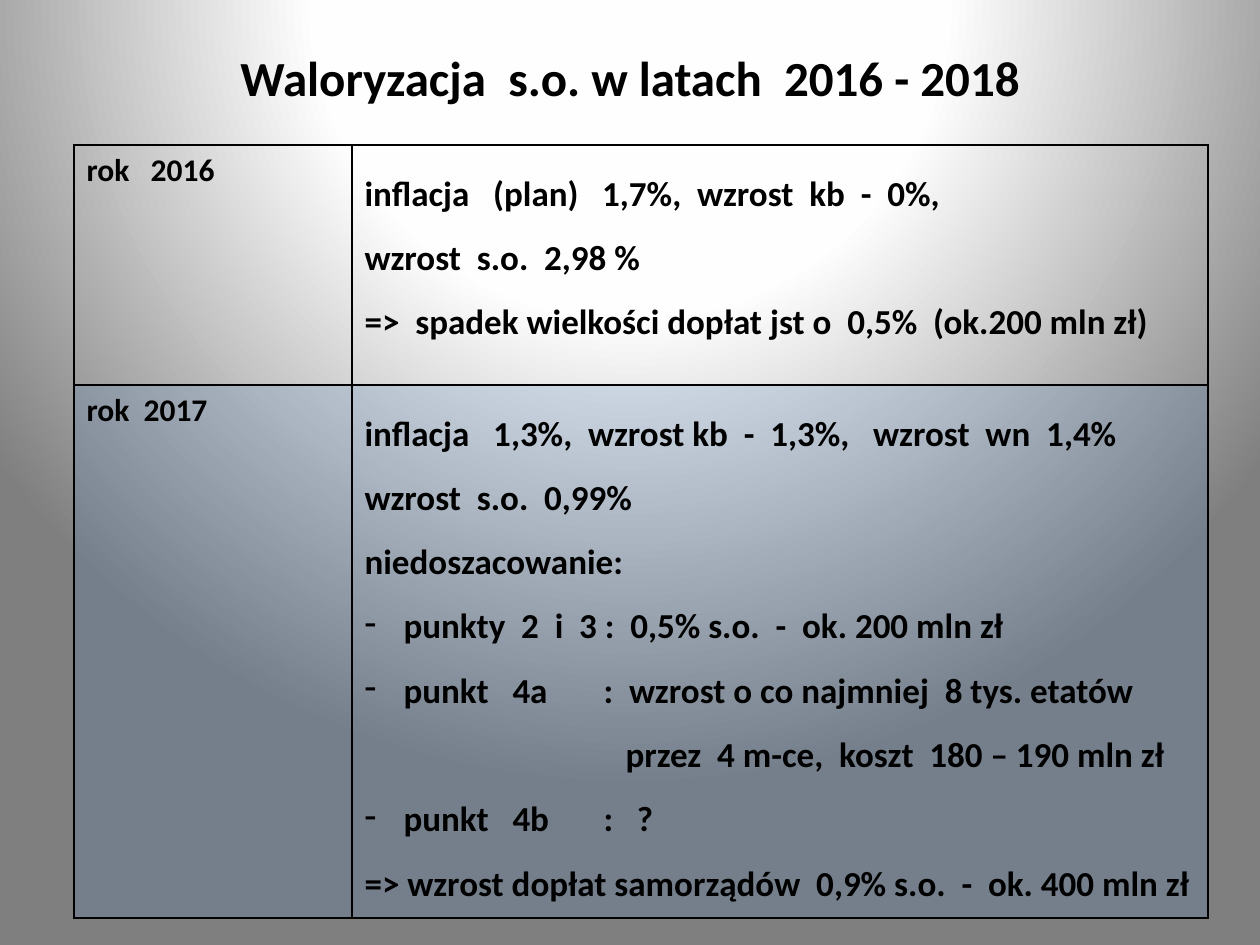
from dataclasses import dataclass

from pptx import Presentation
from pptx import util as u
from pptx.dml.color import RGBColor
from pptx.enum import text
from pptx.oxml import parse_xml
from pptx.oxml.ns import nsdecls, qn

SCALE = 914400 / 126  # EMU in one px


@dataclass(frozen=True)
class Theme:
    font: str = "Calibri"
    ink: str = "000000"
    shade: str = "4F81BD"
    shade_alpha: int = 20
    backdrop: tuple = ((0, "FFFFFF"), (40, "FEFEFE"), (100, "7F7F7F"))
    title_size: int = 28
    year_size: int = 18
    detail_size: int = 20
    line_spacing: float = 1.5


THEME = Theme()
BULLET_INDENT = 39
COLON_TAB = 239
CONTINUATION_INDENT = 261

# Each year: label, shaded or not, lines as (kind, wording)
YEARS = [
    ("rok   2016", False, [
        ("plain", "inflacja   (plan)   1,7%,  wzrost  kb  -  0%,"),
        ("plain", "wzrost  s.o.  2,98 %"),
        ("plain", "=>  spadek wielkości dopłat jst o  0,5%  (ok.200 mln zł)"),
    ]),
    ("rok  2017", True, [
        ("plain", "inflacja   1,3%,  wzrost kb  -  1,3%,   wzrost  wn  1,4%"),
        ("plain", "wzrost  s.o.  0,99%"),
        ("plain", "niedoszacowanie:"),
        ("bullet", "punkty  2  i  3 :  0,5% s.o.  -  ok. 200 mln zł"),
        ("bullet", "punkt   4a\t:  wzrost o co najmniej  8 tys. etatów"),
        ("continuation", "przez  4 m-ce,  koszt  180 – 190 mln zł"),
        ("bullet", "punkt   4b\t:   ?"),
        ("plain", "=> wzrost dopłat samorządów  0,9% s.o.  -  ok. 400 mln zł"),
    ]),
]


def px(length):
    return u.Emu(round(length * SCALE))


def set_background(slide):
    stops = "".join(
        f'<a:gs pos="{position * 1000}"><a:srgbClr val="{color}"/></a:gs>'
        for position, color in THEME.backdrop)
    background = parse_xml(
        f'<p:bg {nsdecls("p", "a")}><p:bgPr><a:gradFill><a:gsLst>{stops}</a:gsLst>'
        '<a:path path="circle"><a:fillToRect l="50000" t="-80000" r="50000" b="180000"/>'
        '</a:path></a:gradFill><a:effectLst/></p:bgPr></p:bg>')
    slide.element.cSld.insert(0, background)


def write(paragraph, wording, size):
    paragraph.text = wording
    font = paragraph.font
    font.name, font.size, font.bold = THEME.font, u.Pt(size), True
    font.color.rgb = RGBColor.from_string(THEME.ink)


def add_title(slide, wording):
    frame = slide.shapes.add_textbox(px(63), px(38), px(1134), px(77)).text_frame
    frame.word_wrap = True
    frame.vertical_anchor = text.MSO_ANCHOR.MIDDLE
    write(frame.paragraphs[0], wording, THEME.title_size)
    frame.paragraphs[0].alignment = text.PP_ALIGN.CENTER


def indent(paragraph, kind):
    """Give a detail line its hanging dash or its continuation indent."""
    properties = paragraph._p.get_or_add_pPr()
    if kind == "continuation":
        properties.set("marL", str(px(CONTINUATION_INDENT)))
    elif kind == "bullet":
        properties.set("marL", str(px(BULLET_INDENT)))
        properties.set("indent", str(-px(BULLET_INDENT)))
        for position, xml in enumerate((
                f'<a:buChar {nsdecls("a")} char="-"/>',
                f'<a:tabLst {nsdecls("a")}><a:tab pos="{px(COLON_TAB)}" algn="l"/></a:tabLst>')):
            # After the line spacing, before the default run properties
            properties.insert(1 + position, parse_xml(xml))


def style_cell(cell, shaded):
    properties = cell._tc.get_or_add_tcPr()
    for side in ("lnL", "lnR", "lnT", "lnB"):
        properties.append(parse_xml(
            f'<a:{side} {nsdecls("a")} w="12700"><a:solidFill>'
            f'<a:srgbClr val="{THEME.ink}"/></a:solidFill></a:{side}>'))
    if shaded:
        cell.fill.solid()
        cell.fill.fore_color.rgb = RGBColor.from_string(THEME.shade)
        color = properties.find(qn("a:solidFill")).find(qn("a:srgbClr"))
        color.append(parse_xml(
            f'<a:alpha {nsdecls("a")} val="{THEME.shade_alpha * 1000}"/>'))
    else:
        cell.fill.background()


def fill_details(cell, lines):
    frame = cell.text_frame
    for number, (kind, wording) in enumerate(lines):
        paragraph = frame.add_paragraph() if number else frame.paragraphs[0]
        write(paragraph, wording, THEME.detail_size)
        paragraph.line_spacing = THEME.line_spacing
        indent(paragraph, kind)


def add_year_table(slide):
    widths, heights = (278, 856), (240, 533)
    frame = slide.shapes.add_table(len(YEARS), 2, px(74), px(145),
                                   px(sum(widths)), px(sum(heights)))
    table = frame.table
    table.first_row = table.horz_banding = False
    for column, width in zip(table.columns, widths):
        column.width = px(width)
    for row, height, (label, shaded, lines) in zip(table.rows, heights, YEARS):
        row.height = px(height)
        year, details = row.cells
        write(year.text_frame.paragraphs[0], label, THEME.year_size)
        fill_details(details, lines)
        for cell in (year, details):
            style_cell(cell, shaded)


def main():
    presentation = Presentation()
    presentation.slide_width, presentation.slide_height = px(1260), px(945)
    slide = presentation.slides.add_slide(presentation.slide_layouts[6])
    set_background(slide)
    add_title(slide, "Waloryzacja  s.o. w latach  2016 - 2018")
    add_year_table(slide)
    presentation.save("out.pptx")


if __name__ == "__main__":
    main()
